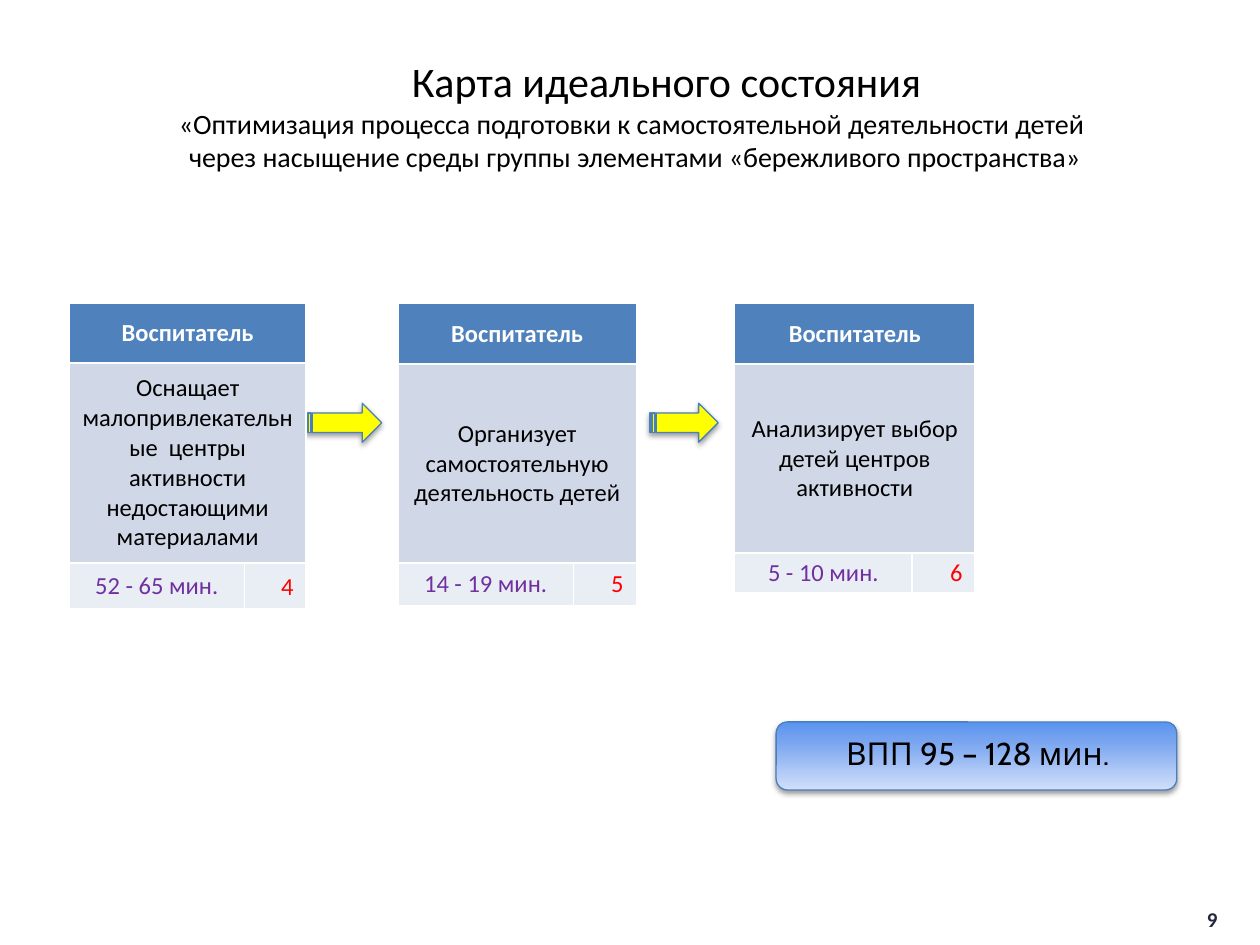
import copy

import lxml.etree
import pptx
import pptx.dml.color
import pptx.enum.shapes
import pptx.enum.text
import pptx.oxml.ns
import pptx.util

Inches, Pt = pptx.util.Inches, pptx.util.Pt
SHAPE = pptx.enum.shapes.MSO_SHAPE
ALIGN = pptx.enum.text.PP_ALIGN
ANCHOR = pptx.enum.text.MSO_ANCHOR
qn = pptx.oxml.ns.qn

COLORS = {
    "black": "000000", "white": "FFFFFF", "header": "4F81BD", "action": "D0D8E8",
    "result": "E9EDF4", "time": "7030A0", "number": "FF0000", "arrow": "FFFF00",
    "outline": "4B7EBC", "page": "24263C",
}
TOTAL_GRADIENT = [(0, "D1DFFA"), (0.72, "78A4EF"), (1, "5994F0")]

TITLE = [
    ("\tКарта идеального состояния", 24),
    ("«Оптимизация процесса подготовки к самостоятельной деятельности детей ", 16),
    ("через насыщение среды группы элементами «бережливого пространства»", 16),
]
ROLE = "Воспитатель"
STEPS = [
    {"action": "Оснащает малопривлекательные  центры активности недостающими материалами",
     "time": "52 - 65 мин.", "number": "4",
     "left": 0.55, "columns": (1.39, 0.49), "rows": (0.47, 1.59, 0.36), "pad": 0.05},
    {"action": "Организует самостоятельную деятельность детей",
     "time": "14 - 19 мин.", "number": "5",
     "left": 3.16, "columns": (1.39, 0.5), "rows": (0.48, 1.58, 0.32), "pad": 0.05},
    {"action": "Анализирует выбор детей центров активности",
     "time": "5 - 10 мин.", "number": "6",
     "left": 5.83, "columns": (1.41, 0.5), "rows": (0.48, 1.5, 0.27), "pad": 0.04},
]
STEPS_TOP = 2.41
ARROWS = [(2.43, 0.6), (5.16, 0.54)]  # left, width
ARROW_TOP, ARROW_HEIGHT = 3.2, 0.31
TOTAL, PAGE = "ВПП 95 – 128 мин.", "9"


def rgb(name):
    return pptx.dml.color.RGBColor.from_string(COLORS.get(name, name))


def write(frame, lines, color="black", font="Calibri", bold=False,
          align=ALIGN.CENTER, anchor=ANCHOR.MIDDLE):
    """Fill the first paragraph with (text, size) lines, split by line breaks."""
    frame.word_wrap = True
    frame.vertical_anchor = anchor
    paragraph = frame.paragraphs[0]
    paragraph.alignment = align
    for index, (text, size) in enumerate(lines):
        if index:
            paragraph.add_line_break()
        run = paragraph.add_run()
        run.text = text
        run.font.size = Pt(size)
        run.font.name = font
        run.font.bold = bold
        run.font.color.rgb = rgb(color)


def add_outlined(slide, kind, box):
    """Add a preset shape with the blue outline and the soft shadow below it."""
    shape = slide.shapes.add_shape(kind, *map(Inches, box))
    shape.line.color.rgb = rgb("outline")
    shape.line.width = Pt(0.75)
    shape.shadow.inherit = False
    effects = shape._element.spPr.find(qn("a:effectLst"))
    shadow = lxml.etree.SubElement(effects, qn("a:outerShdw"), blurRad="40000",
                                   dist="20000", dir="5400000", rotWithShape="0")
    tone = lxml.etree.SubElement(shadow, qn("a:srgbClr"), val=COLORS["black"])
    lxml.etree.SubElement(tone, qn("a:alpha"), val="38000")
    return shape


def add_label(slide, box, text, size, **style):
    label = slide.shapes.add_textbox(*map(Inches, box))
    write(label.text_frame, [(text, size)], **style)


def add_step(slide, step):
    columns, rows = step["columns"], step["rows"]
    table = slide.shapes.add_table(
        len(rows), len(columns), Inches(step["left"]), Inches(STEPS_TOP),
        Inches(sum(columns)), Inches(sum(rows))).table
    for column, width in zip(table.columns, columns):
        column.width = Inches(width)
    for row, height in zip(table.rows, rows):
        row.height = Inches(height)
    for row in (0, 1):
        table.cell(row, 0).merge(table.cell(row, 1))
    cells = [
        (0, 0, ROLE, "header", {"color": "white", "bold": True}),
        (1, 0, step["action"], "action", {}),
        (2, 0, step["time"], "result", {"color": "time"}),
        (2, 1, step["number"], "result",
         {"color": "number", "align": ALIGN.RIGHT, "anchor": ANCHOR.BOTTOM}),
    ]
    for row, column, text, fill, style in cells:
        cell = table.cell(row, column)
        cell.fill.solid()
        cell.fill.fore_color.rgb = rgb(fill)
        cell.margin_top = cell.margin_bottom = Inches(step["pad"])
        anchor = style.pop("anchor", ANCHOR.MIDDLE)
        write(cell.text_frame, [(text, 14)], **style)
        cell.vertical_anchor = anchor


def add_total(slide):
    panel = add_outlined(slide, SHAPE.ROUNDED_RECTANGLE, (6.16, 5.73, 3.18, 0.54))
    panel.fill.gradient()
    panel.fill.gradient_angle = 90
    stop_list = panel._element.spPr.find(".//" + qn("a:gsLst"))
    stop_list.append(copy.deepcopy(stop_list[-1]))
    for stop, (position, color) in zip(panel.fill.gradient_stops, TOTAL_GRADIENT):
        stop.position = position
        stop.color.rgb = rgb(color)
    add_label(slide, (6.17, 5.78, 3.18, 0.4), TOTAL, 18, font="Cabin", anchor=ANCHOR.TOP)


def main():
    deck = pptx.Presentation()
    deck.slide_width, deck.slide_height = Inches(10), Inches(7.5)
    slide = deck.slides.add_slide(deck.slide_layouts[5])

    title = slide.shapes.title
    title.left, title.top, title.width, title.height = map(Inches, (0.29, 0.36, 9.5, 1.1))
    title.text_frame.auto_size = pptx.enum.text.MSO_AUTO_SIZE.NONE
    write(title.text_frame, TITLE)

    add_label(slide, (9.43, 7.14, 0.38, 0.31), PAGE, 12, color="page", bold=True)
    for left, width in ARROWS:
        arrow = add_outlined(slide, SHAPE.STRIPED_RIGHT_ARROW,
                             (left, ARROW_TOP, width, ARROW_HEIGHT))
        arrow.fill.solid()
        arrow.fill.fore_color.rgb = rgb("arrow")
    for step in STEPS:
        add_step(slide, step)
    add_total(slide)
    deck.save("out.pptx")


if __name__ == "__main__":
    main()
